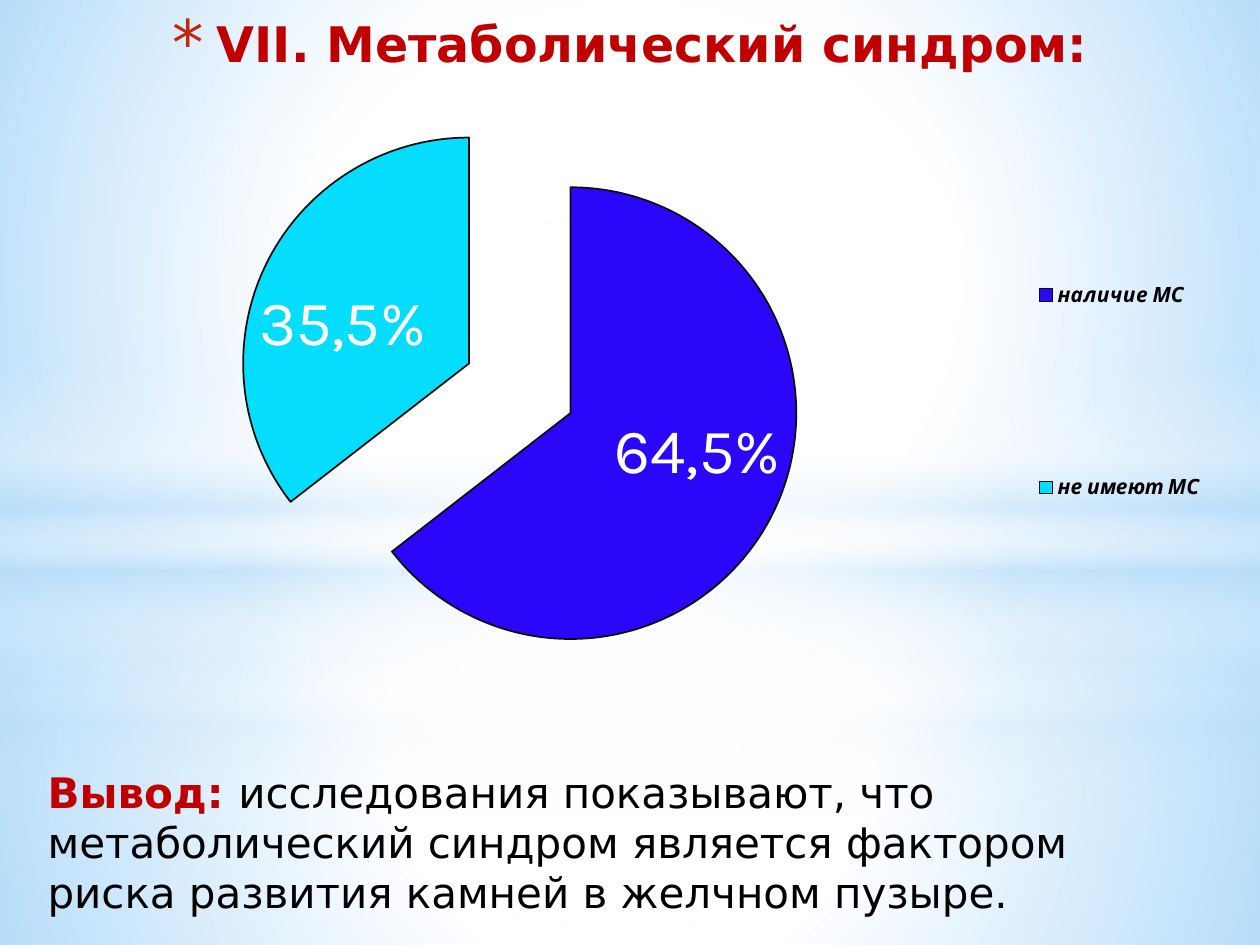
import pptx
import pptx.chart.data
import pptx.dml.color
import pptx.enum.chart
import pptx.enum.shapes
import pptx.enum.text
import pptx.oxml
import pptx.oxml.ns
import pptx.util

Cm, Pt = pptx.util.Cm, pptx.util.Pt
SHAPE = pptx.enum.shapes.MSO_SHAPE
ALIGN = pptx.enum.text.PP_ALIGN
NAMESPACES = pptx.oxml.ns.nsdecls("a", "c")
WIDTH, HEIGHT = 25.4, 19.05
COLORS = {"white": "FFFFFF", "sky": "B4DCFA", "red": "C00000", "bullet": "C3260C",
          "black": "000000", "outline": "0D0D0D", "blue": "2A07F9", "cyan": "04DEFC"}


def rgb(name):
    return pptx.dml.color.RGBColor.from_string(COLORS[name])


def add_span(para, text, size=24, color="black", bold=False, font="DejaVu Sans"):
    span = para.add_run()
    span.text = text
    span.font.size, span.font.bold, span.font.name = Pt(size), bold, font
    span.font.color.rgb = rgb(color)


def layout_xml(content="", **values):
    """Manual chart layout, in fractions of the chart area."""
    numbers = "".join(f'<c:{key} val="{value}"/>' for key, value in values.items())
    return pptx.oxml.parse_xml(
        f'<c:layout {NAMESPACES}><c:manualLayout>{content}{numbers}'
        '</c:manualLayout></c:layout>')


class SlideBuilder:
    def __init__(self, page, font="Karla"):
        self.page = page
        self.font = font

    def glow(self, kind, top, height, stops, linear=False):
        """Full-width shape with gradient stops of (position, colour, opacity)."""
        shape = self.page.shapes.add_shape(kind, 0, Cm(top), Cm(WIDTH), Cm(height))
        shape.shadow.inherit = False
        shape.line.fill.background()
        marks = "".join(
            f'<a:gs pos="{position * 1000}"><a:srgbClr val="{COLORS[color]}">'
            f'<a:alpha val="{opacity * 1000}"/></a:srgbClr></a:gs>'
            for position, color, opacity in stops)
        direction = ('<a:lin ang="5400000" scaled="0"/>' if linear else
                     '<a:path path="circle"><a:fillToRect l="50000" t="50000" '
                     'r="50000" b="50000"/></a:path>')
        shape._element.spPr.find(pptx.oxml.ns.qn("a:prstGeom")).addnext(pptx.oxml.parse_xml(
            f'<a:gradFill {NAMESPACES} rotWithShape="1"><a:gsLst>{marks}</a:gsLst>'
            f'{direction}</a:gradFill>'))

    def backdrop(self, horizon, band_top, extra, halo):
        """Ground, sky, horizon band and central halo; extra is added opacity."""
        def radial(center, middle, position):
            return [(0, "white", center + extra), (position, "white", middle + extra),
                    (100, "sky", 79 + extra)]

        band = [(0, "white", 0), (29, "white", 30), (45, "sky", 40),
                (55, "white", 26), (65, "sky", 60), (100, "white", 0)]
        self.glow(SHAPE.RECTANGLE, horizon, HEIGHT - horizon, radial(91, 76, 37))
        self.glow(SHAPE.RECTANGLE, 0, horizon, radial(89, 62, 48))
        self.glow(SHAPE.RECTANGLE, band_top, 6.35, band, linear=True)
        self.glow(SHAPE.OVAL, 4.45, 14.17, [(0, "white", 100), (halo, "white", 0)])

    def text_box(self, left, top, width, height):
        box = self.page.shapes.add_textbox(Cm(left), Cm(top), Cm(width), Cm(height))
        box.text_frame.word_wrap = True
        return box.text_frame

    def title(self, text):
        frame = self.text_box(0, 0.28, WIDTH, 1.6)
        frame.margin_top = 0
        para = frame.paragraphs[0]
        para.alignment = ALIGN.CENTER
        props = para._p.get_or_add_pPr()
        props.set("marL", str(Cm(0.89)))
        props.set("indent", str(Cm(-0.89)))
        for xml in (f'<a:buClr {NAMESPACES}><a:srgbClr val="{COLORS["bullet"]}"/></a:buClr>',
                    f'<a:buSzPct {NAMESPACES} val="128000"/>',
                    f'<a:buFont {NAMESPACES} typeface="DejaVu Sans"/>',
                    f'<a:buChar {NAMESPACES} char="*"/>'):
            props.append(pptx.oxml.parse_xml(xml))
        add_span(para, text, size=28, color="red", bold=True)

    def conclusion(self, lead, text):
        para = self.text_box(0.71, 15.32, 23.8, 2.59).paragraphs[0]
        add_span(para, lead, color="red", bold=True)
        add_span(para, text)

    def pie(self, slices):
        """Exploded pie from (category, value, label, colour, label shift) rows."""
        data = pptx.chart.data.CategoryChartData(number_format="0.00%")
        data.categories = [row[0] for row in slices]
        data.add_series("Series 1", [row[1] for row in slices])
        chart = self.page.shapes.add_chart(
            pptx.enum.chart.XL_CHART_TYPE.PIE, Cm(-1.09), Cm(1.52), Cm(27.81), Cm(13.41),
            data).chart
        chart.has_title = False
        chart.font.name, chart.font.size = self.font, Pt(10)
        chart.font.color.rgb = rgb("black")
        edges = '<c:xMode val="edge"/><c:yMode val="edge"/>'

        chart.has_legend = True
        legend = chart.legend
        legend.position = pptx.enum.chart.XL_LEGEND_POSITION.RIGHT
        legend.include_in_layout = False
        legend.font.size, legend.font.name = Pt(12), self.font
        legend.font.bold = legend.font.italic = True
        legend.font.color.rgb = rgb("black")
        position = legend._element.find(pptx.oxml.ns.qn("c:legendPos"))
        position.addnext(layout_xml(edges, x=0.786, y=0.06, w=0.13, h=0.83))

        plot = chart.plots[0]
        plot.vary_by_categories = True
        area = plot._element.getparent()
        for old in area.findall(pptx.oxml.ns.qn("c:layout")):
            area.remove(old)
        area.insert(0, layout_xml('<c:layoutTarget val="inner"/>' + edges,
                                  x=0.078, y=0.046, w=0.676, h=0.849))

        series = plot.series[0]
        series.format.line.color.rgb = rgb("outline")
        series.format.line.width = Pt(1)
        series._element.find(pptx.oxml.ns.qn("c:spPr")).addnext(
            pptx.oxml.parse_xml(f'<c:explosion {NAMESPACES} val="25"/>'))
        labels = series.data_labels
        labels.show_value, labels.show_percentage = True, False
        labels.number_format, labels.number_format_is_linked = "0.00%", False
        labels.font.size, labels.font.bold, labels.font.name = Pt(36), True, self.font
        labels.font.color.rgb = rgb("white")
        for index, (_, _, text, color, (x, y)) in enumerate(slices):
            point = series.points[index]
            point.format.fill.solid()
            point.format.fill.fore_color.rgb = rgb(color)
            point.format.line.color.rgb = rgb("outline")
            point.format.line.width = Pt(1)
            label = point.data_label
            add_span(label.text_frame.paragraphs[0], text, size=36, color="white",
                     font=self.font)
            label.position = pptx.enum.chart.XL_LABEL_POSITION.INSIDE_END
            entry = labels._element.findall(pptx.oxml.ns.qn("c:dLbl"))[index]
            entry.find(pptx.oxml.ns.qn("c:idx")).addnext(layout_xml(x=x, y=y))


def main():
    deck = pptx.Presentation()
    deck.slide_width, deck.slide_height = Cm(WIDTH), Cm(HEIGHT)
    builder = SlideBuilder(deck.slides.add_slide(deck.slide_layouts[6]))
    builder.backdrop(horizon=14.17, band_top=10.46, extra=0, halo=56)
    builder.backdrop(horizon=10.74, band_top=7.37, extra=1, halo=54)
    builder.title("VII. Метаболический синдром:")
    builder.conclusion("Вывод: ", "исследования показывают, что метаболический синдром "
                       "является фактором риска развития камней в желчном пузыре.")
    builder.pie([("наличие МС", 0.645, "64,5%", "blue", (0.01, -0.03)),
                 ("не имеют МС", 0.355, "35,5%", "cyan", (-0.01, 0.03))])
    deck.save("out.pptx")


if __name__ == "__main__":
    main()
